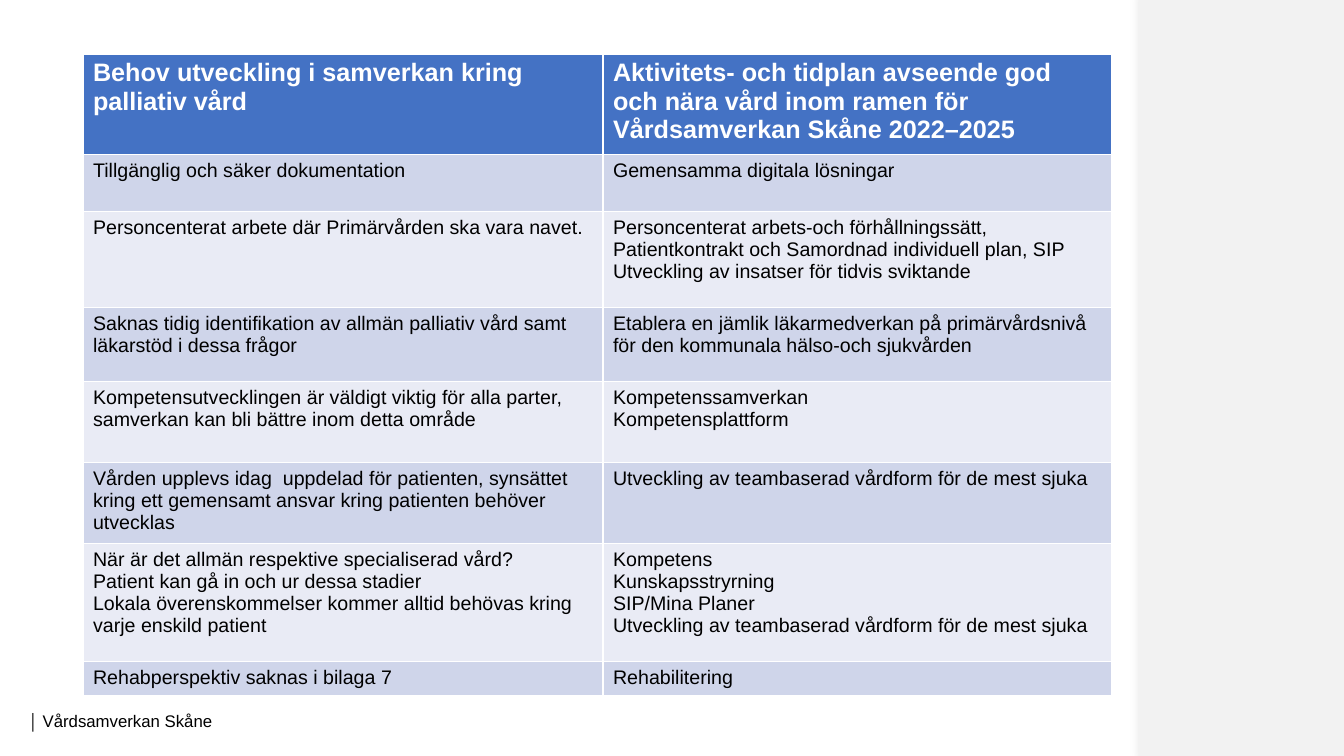
"""Build the slide comparing palliative care needs with the activity plan."""
from lxml import etree
from pptx import Presentation
from pptx.dml.color import RGBColor
from pptx.enum.shapes import MSO_SHAPE
from pptx.enum.text import MSO_ANCHOR
from pptx.oxml import parse_xml
from pptx.util import Pt

RECT = MSO_SHAPE.RECTANGLE
MIDDLE = MSO_ANCHOR.MIDDLE
PX = 914400 / 100.8
FONT = "Arial"
HEADER_FILL = "4472C4"
BAND_FILLS = ["E9EBF5", "CFD5EA"]
COLUMN_WIDTHS = [520, 509]
ROW_HEIGHTS = [100, 57, 96, 74, 81, 80, 118, 33]
ROWS = [
    ("Behov utveckling i samverkan kring palliativ vård",
     "Aktivitets- och tidplan avseende god och nära vård inom ramen för Vårdsamverkan Skåne 2022–2025"),
    ("Tillgänglig och säker dokumentation",
     "Gemensamma digitala lösningar"),
    ("Personcenterat arbete där Primärvården ska vara navet.",
     "Personcenterat arbets-och förhållningssätt, Patientkontrakt och Samordnad individuell plan, SIP\n"
     "Utveckling av insatser för tidvis sviktande"),
    ("Saknas tidig identifikation av allmän palliativ vård samt läkarstöd i dessa frågor",
     "Etablera en jämlik läkarmedverkan på primärvårdsnivå för den kommunala hälso-och sjukvården"),
    ("Kompetensutvecklingen är väldigt viktig för alla parter, samverkan kan bli bättre inom detta område",
     "Kompetenssamverkan\nKompetensplattform"),
    ("Vården upplevs idag  uppdelad för patienten, synsättet kring ett gemensamt ansvar kring patienten behöver utvecklas",
     "Utveckling av teambaserad vårdform för de mest sjuka"),
    ("När är det allmän respektive specialiserad vård?\nPatient kan gå in och ur dessa stadier\n"
     "Lokala överenskommelser kommer alltid behövas kring varje enskild patient",
     "Kompetens\nKunskapsstryrning\nSIP/Mina Planer\nUtveckling av teambaserad vårdform för de mest sjuka"),
    ("Rehabperspektiv saknas i bilaga 7", "Rehabilitering"),
]
SHADOW = (
    '<a:effectLst xmlns:a="http://schemas.openxmlformats.org/drawingml/2006/main">'
    '<a:outerShdw blurRad="139700" dist="50800" dir="0" algn="l" rotWithShape="0">'
    '<a:srgbClr val="000000"><a:alpha val="25000"/></a:srgbClr></a:outerShdw></a:effectLst>'
)


def px(*values):
    return [round(v * PX) for v in values]


def color(value):
    return RGBColor.from_string(value)


prs = Presentation()
prs.slide_width, prs.slide_height = px(1344, 756)
s = prs.slides.add_slide(prs.slide_layouts[6])

panel = s.shapes.add_shape(RECT, *px(1139, -10, 206, 773))
panel.fill.solid()
panel.fill.fore_color.rgb = color("F2F2F2")
panel.line.fill.background()
panel._element.spPr.append(parse_xml(SHADOW))

footer = s.shapes.add_textbox(*px(19, 701, 302, 40))
tf = footer.text_frame
tf.word_wrap = True
tf.vertical_anchor = MIDDLE
p = tf.paragraphs[0]
p.font.name = FONT
p.font.color.rgb = color("000000")
for text, size, bold in [("│", 11, True), (" ", 10.5, False), ("Vårdsamverkan Skåne", 12, False)]:
    r = p.add_run()
    r.text = text
    r.font.size = Pt(size)
    r.font.bold = bold

frame = s.shapes.add_table(len(ROWS), 2, *px(83, 54, sum(COLUMN_WIDTHS), sum(ROW_HEIGHTS)))
table = frame.table
for column, width in zip(table.columns, px(*COLUMN_WIDTHS)):
    column.width = width
for row, height in zip(table.rows, px(*ROW_HEIGHTS)):
    row.height = height

for i, texts in enumerate(ROWS):
    header = i == 0
    for j, text in enumerate(texts):
        cell = table.cell(i, j)
        cell.fill.solid()
        cell.fill.fore_color.rgb = color(HEADER_FILL if header else BAND_FILLS[i % 2])
        cell.text = text
        for p in cell.text_frame.paragraphs:
            p.font.name = FONT
            p.font.size = Pt(18 if header else 14)
            p.font.bold = header
            p.font.color.rgb = color("FFFFFF" if header else "000000")

prs.save("out.pptx")
